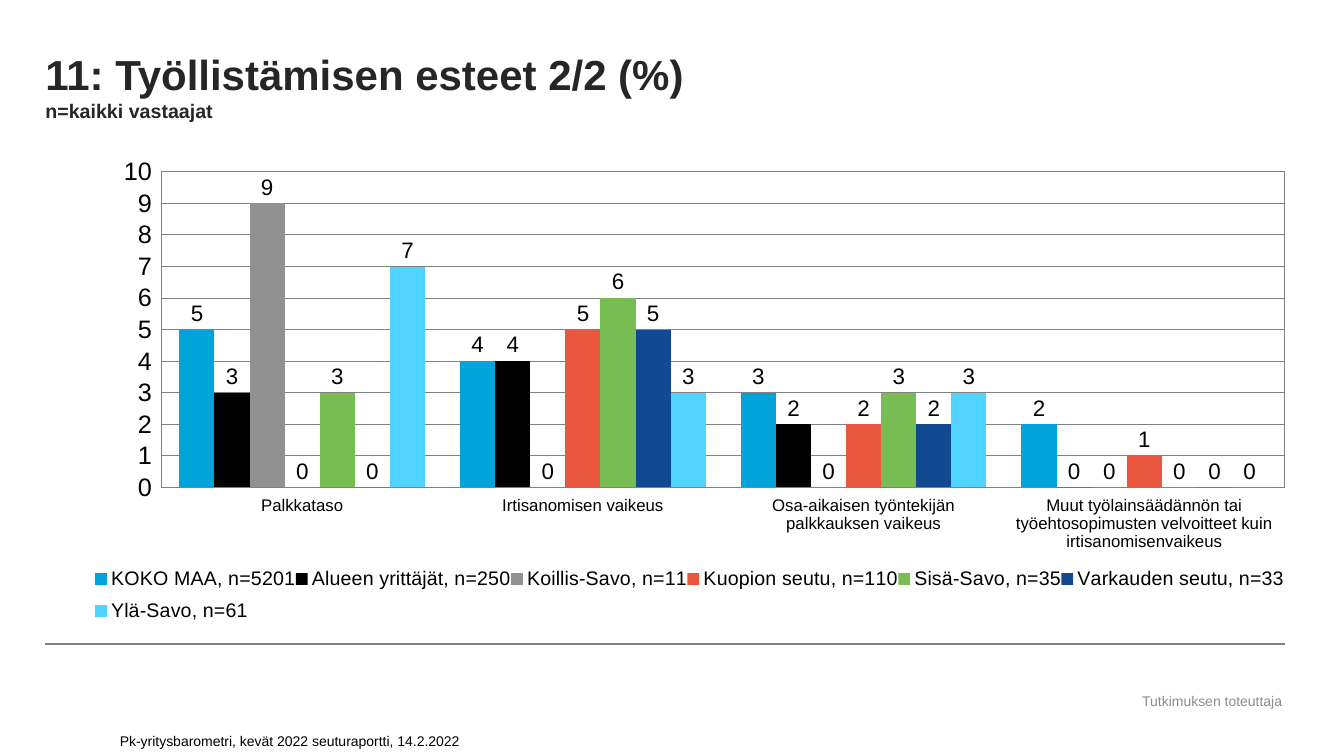
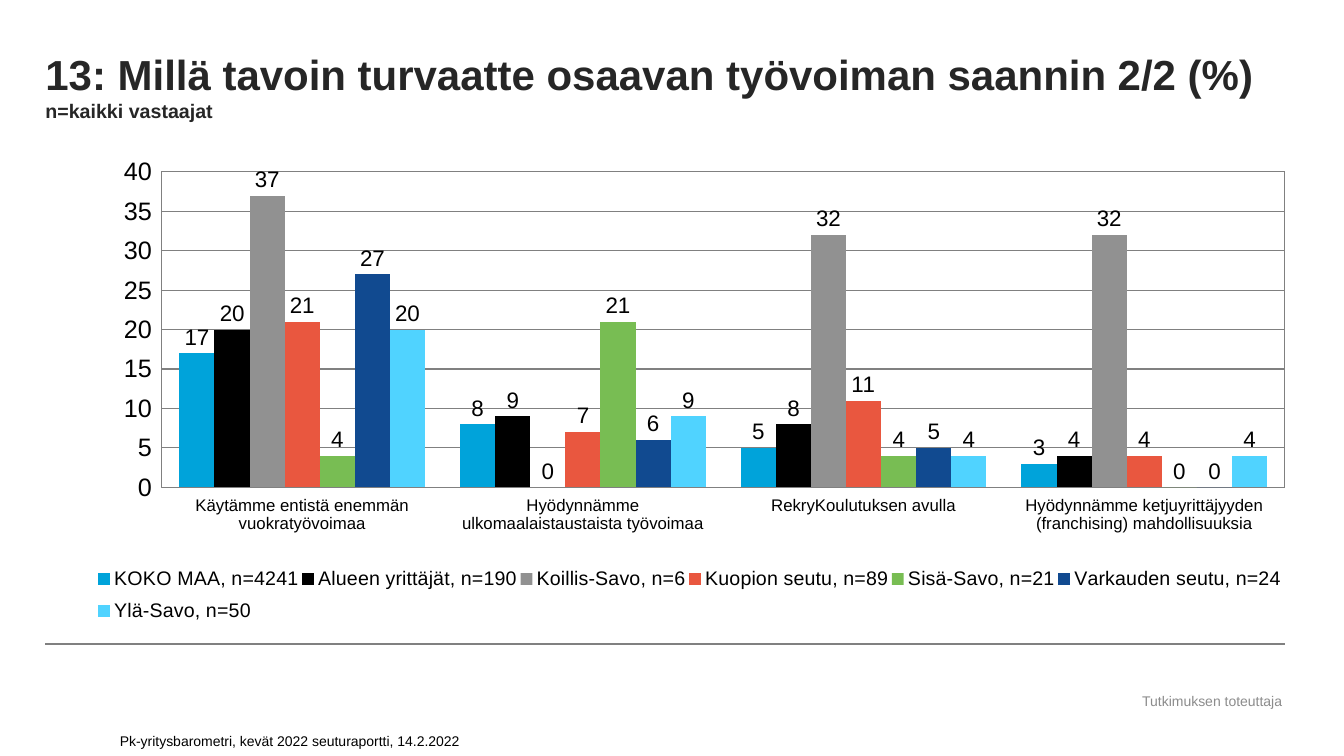
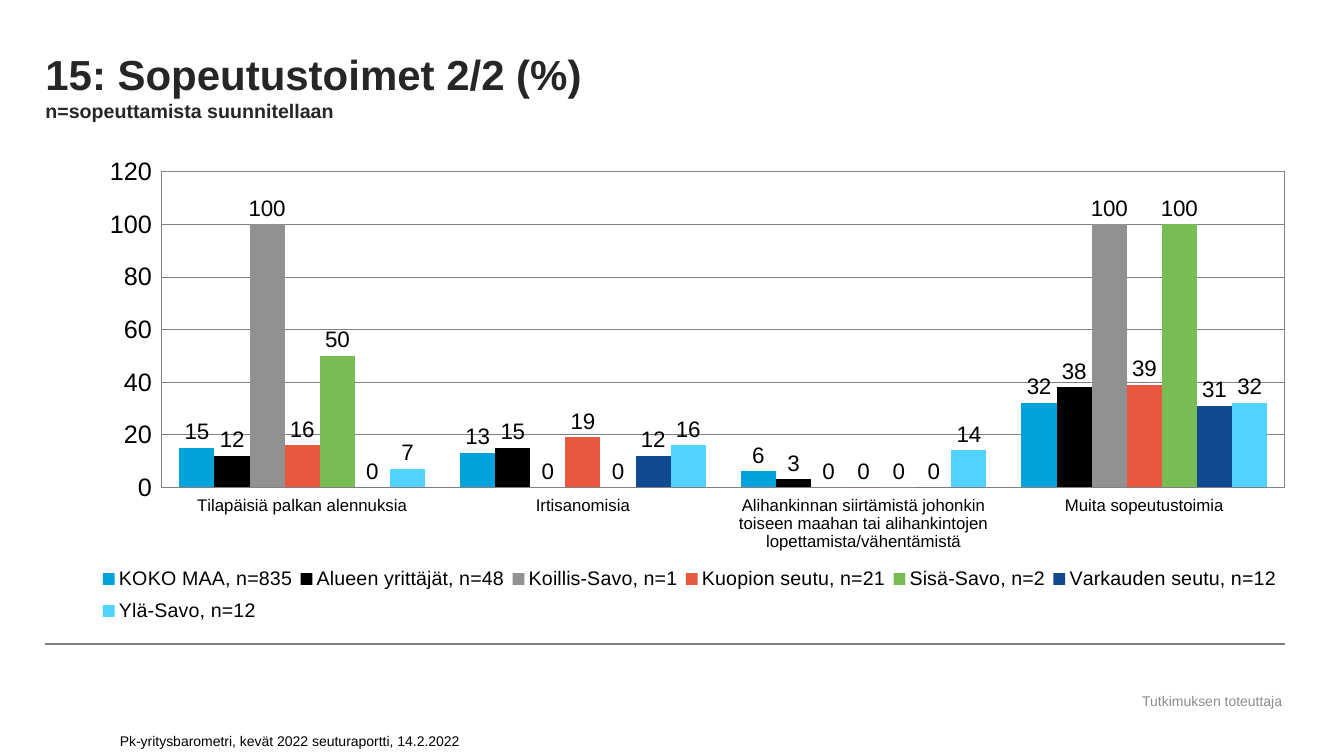
from dataclasses import dataclass

from lxml.etree import SubElement
from pptx import Presentation
from pptx.chart.chart import Chart
from pptx.chart.data import CategoryChartData
from pptx.dml.color import RGBColor
from pptx.enum.chart import XL_CHART_TYPE as ChartType
from pptx.enum.chart import XL_LABEL_POSITION as LabelPosition
from pptx.enum.chart import XL_LEGEND_POSITION as LegendPosition
from pptx.enum.chart import XL_TICK_LABEL_POSITION as TickLabels
from pptx.enum.chart import XL_TICK_MARK as TickMark
from pptx.enum.shapes import MSO_CONNECTOR as Connector
from pptx.enum.text import MSO_ANCHOR as Anchor
from pptx.enum.text import MSO_AUTO_SIZE as AutoSize
from pptx.enum.text import PP_ALIGN as Align
from pptx.oxml.ns import qn
from pptx.slide import Slide
from pptx.util import Pt

COLOURS = {
    "title": "262626",
    "text": "000000",
    "credit": "8C8C8C",
    "rule": "808080",
}
REGIONS = {
    "KOKO MAA": "00A3DA",
    "Alueen yrittäjät": "000000",
    "Koillis-Savo": "919191",
    "Kuopion seutu": "E9573F",
    "Sisä-Savo": "78BD53",
    "Varkauden seutu": "114A90",
    "Ylä-Savo": "50D3FF",
}
FONT = "Arial"
LEFT, WIDTH = 32.4, 885.6
RULE_TOP = 460
PLOT_BOX = (0.094, 0.033, 0.906, 0.663)
LEGEND_BOX = (0.04, 0.845, 0.96, 0.155)


@dataclass(frozen=True)
class Question:
    title: str
    base: str
    answers: tuple[str, ...]
    respondents: tuple[int, ...]
    shares: tuple[tuple[int, ...], ...]
    axis_max: int
    axis_step: int


@dataclass(frozen=True)
class Caption:
    text: str
    box: tuple[float, float, float, float]
    colour: str
    align: Align
    anchor: Anchor


CAPTIONS = (
    Caption("Tutkimuksen toteuttaja", (803.5, 491, 124.6, 18.7),
            "credit", Align.CENTER, Anchor.MIDDLE),
    Caption("Pk-yritysbarometri, kevät 2022 seuturaportti, 14.2.2022",
            (78.5, 513.4, 389.5, 25.2), "text", Align.LEFT, Anchor.BOTTOM),
)

QUESTIONS = (
    Question(
        "11: Työllistämisen esteet 2/2 (%)",
        "n=kaikki vastaajat",
        ("Palkkataso", "Irtisanomisen vaikeus",
         "Osa-aikaisen työntekijän palkkauksen vaikeus",
         "Muut työlainsäädännön tai työehtosopimusten velvoitteet kuin "
         "irtisanomisenvaikeus"),
        (5201, 250, 11, 110, 35, 33, 61),
        ((5, 4, 3, 2), (3, 4, 2, 0), (9, 0, 0, 0), (0, 5, 2, 1),
         (3, 6, 3, 0), (0, 5, 2, 0), (7, 3, 3, 0)),
        10, 1,
    ),
    Question(
        "13: Millä tavoin turvaatte osaavan työvoiman saannin 2/2 (%)",
        "n=kaikki vastaajat",
        ("Käytämme entistä enemmän vuokratyövoimaa",
         "Hyödynnämme ulkomaalaistaustaista työvoimaa",
         "RekryKoulutuksen avulla",
         "Hyödynnämme ketjuyrittäjyyden (franchising) mahdollisuuksia"),
        (4241, 190, 6, 89, 21, 24, 50),
        ((17, 8, 5, 3), (20, 9, 8, 4), (37, 0, 32, 32), (21, 7, 11, 4),
         (4, 21, 4, 0), (27, 6, 5, 0), (20, 9, 4, 4)),
        40, 5,
    ),
    Question(
        "15: Sopeutustoimet 2/2 (%)",
        "n=sopeuttamista suunnitellaan",
        ("Tilapäisiä palkan alennuksia", "Irtisanomisia",
         "Alihankinnan siirtämistä johonkin toiseen maahan tai alihankintojen "
         "lopettamista/vähentämistä",
         "Muita sopeutustoimia"),
        (835, 48, 1, 21, 2, 12, 12),
        ((15, 13, 6, 32), (12, 15, 3, 38), (100, 0, 0, 100), (16, 19, 0, 39),
         (50, 0, 0, 100), (0, 12, 0, 31), (7, 16, 14, 32)),
        120, 20,
    ),
)


def rgb(name: str) -> RGBColor:
    return RGBColor.from_string(COLOURS[name])


def add_title(slide: Slide, question: Question) -> None:
    heading = slide.shapes.title
    heading.left, heading.top = Pt(LEFT), Pt(0)
    heading.width, heading.height = Pt(WIDTH), Pt(87.8)
    frame = heading.text_frame
    frame.margin_left = frame.margin_right = Pt(0)
    frame.margin_top = frame.margin_bottom = Pt(0)
    frame.auto_size = AutoSize.NONE
    frame.word_wrap = True
    frame.vertical_anchor = Anchor.BOTTOM
    paragraph = frame.paragraphs[0]
    paragraph.alignment = Align.LEFT
    paragraph.font.name = FONT
    paragraph.font.bold = True
    paragraph.font.color.rgb = rgb("title")
    topic = paragraph.add_run()
    topic.text = question.title
    topic.font.size = Pt(30)
    paragraph.add_line_break()
    SubElement(paragraph._p.find(qn("a:br")), qn("a:rPr"), sz="3000")
    base = paragraph.add_run()
    base.text = question.base
    base.font.size = Pt(14)


def add_caption(slide: Slide, caption: Caption) -> None:
    frame = slide.shapes.add_textbox(*map(Pt, caption.box)).text_frame
    frame.word_wrap = True
    frame.vertical_anchor = caption.anchor
    paragraph = frame.paragraphs[0]
    paragraph.text = caption.text
    paragraph.alignment = caption.align
    paragraph.font.name = FONT
    paragraph.font.size = Pt(10)
    paragraph.font.color.rgb = rgb(caption.colour)


def add_rule(slide: Slide) -> None:
    rule = slide.shapes.add_connector(
        Connector.STRAIGHT, Pt(LEFT), Pt(RULE_TOP), Pt(LEFT + WIDTH), Pt(RULE_TOP))
    rule.line.color.rgb = rgb("rule")
    rule.line.width = Pt(1.5)
    SubElement(rule._element.spPr, qn("a:effectLst"))


def set_layout(chart: Chart, part: str, position: int,
               box: tuple[float, ...], inner: bool = False) -> None:
    parent = chart.element.find(f".//{qn(part)}")
    for old in parent.findall(qn("c:layout")):
        parent.remove(old)
    layout = SubElement(parent, qn("c:layout"))
    parent.insert(position, layout)
    manual = SubElement(layout, qn("c:manualLayout"))
    settings = [("layoutTarget", "inner")] if inner else []
    settings += [("xMode", "edge"), ("yMode", "edge")]
    settings += zip("xywh", map(str, box))
    for tag, value in settings:
        SubElement(manual, qn(f"c:{tag}"), val=value)


def outline_plot(chart: Chart) -> None:
    plot_area = chart.element.find(f".//{qn('c:plotArea')}")
    properties = SubElement(plot_area, qn("c:spPr"))
    SubElement(properties, qn("a:noFill"))
    border = SubElement(properties, qn("a:ln"), w=str(Pt(0.75)))
    fill = SubElement(border, qn("a:solidFill"))
    SubElement(fill, qn("a:srgbClr"), val=COLOURS["rule"])


def format_axes(chart: Chart, question: Question) -> None:
    for axis in (chart.category_axis, chart.value_axis):
        axis.major_tick_mark = axis.minor_tick_mark = TickMark.NONE
        axis.tick_label_position = TickLabels.LOW
        axis.format.line.color.rgb = rgb("rule")
        axis.format.line.width = Pt(0.75)
    chart.category_axis.tick_labels.font.size = Pt(12)
    shares = chart.value_axis
    shares.minimum_scale = 0
    shares.maximum_scale = question.axis_max
    shares.major_unit = question.axis_step
    shares.has_major_gridlines = True
    shares.major_gridlines.format.line.color.rgb = rgb("rule")
    shares.major_gridlines.format.line.width = Pt(0.75)


def add_share_chart(slide: Slide, question: Question) -> None:
    data = CategoryChartData()
    data.categories = question.answers
    for region, count, shares in zip(REGIONS, question.respondents, question.shares):
        data.add_series(f"{region}, n={count}", shares)
    chart = slide.shapes.add_chart(
        ChartType.COLUMN_CLUSTERED, Pt(LEFT), Pt(111.6), Pt(WIDTH), Pt(339.8), data).chart
    chart.has_title = False
    chart.font.name = FONT
    chart.font.size = Pt(18)
    chart.font.color.rgb = rgb("text")
    format_axes(chart, question)
    plot = chart.plots[0]
    plot.gap_width = 100
    plot.overlap = 0
    plot.vary_by_categories = False
    for series, colour in zip(plot.series, REGIONS.values()):
        series.format.fill.solid()
        series.format.fill.fore_color.rgb = RGBColor.from_string(colour)
        labels = series.data_labels
        labels.show_value = True
        labels.position = LabelPosition.OUTSIDE_END
        labels.number_format = "#,##0"
        labels.number_format_is_linked = False
        labels.font.size = Pt(16)
    chart.has_legend = True
    chart.legend.position = LegendPosition.RIGHT
    chart.legend.include_in_layout = False
    chart.legend.font.size = Pt(14)
    set_layout(chart, "c:plotArea", 0, PLOT_BOX, inner=True)
    set_layout(chart, "c:legend", 1, LEGEND_BOX)
    outline_plot(chart)


def main() -> None:
    deck = Presentation()
    deck.slide_width, deck.slide_height = Pt(960), Pt(540)
    title_only = deck.slide_layouts[5]
    for question in QUESTIONS:
        slide = deck.slides.add_slide(title_only)
        add_rule(slide)
        add_title(slide, question)
        for caption in CAPTIONS:
            add_caption(slide, caption)
        add_share_chart(slide, question)
    deck.save("out.pptx")


if __name__ == "__main__":
    main()
